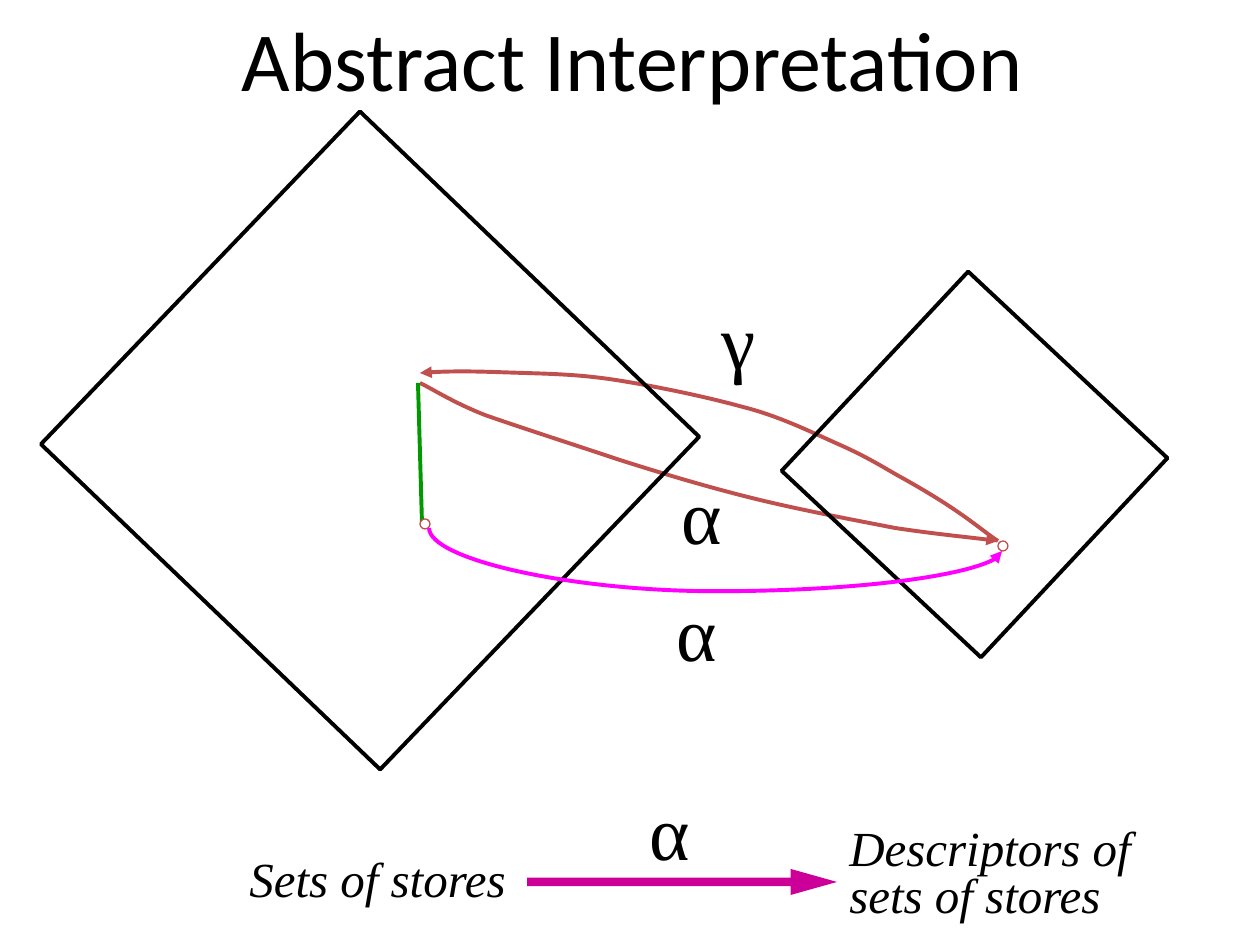
from lxml.etree import SubElement
from pptx import Presentation
from pptx.dml.color import RGBColor
from pptx.enum.shapes import MSO_CONNECTOR as CONN, MSO_SHAPE as SHAPE
from pptx.enum.text import MSO_ANCHOR as ANCHOR, PP_ALIGN as ALIGN
from pptx.oxml.ns import qn
from pptx.util import Pt

PX = 914400 / 126
SERIF = "Times New Roman"
RED, GREEN, PINK, PURPLE = "C0504D", "009900", "FF00FF", "CC0099"

TITLE = ("Abstract Interpretation", (97, 0, 1071, 116))
DIAMONDS = [((838, 328, 273, 273), 43.1), ((135, 210, 470, 461), 43.8)]
DOTS = [(420, 519), (998, 541)]
DOT_SIZE = 10
GREEK = [
    ("α", (665, 461, 74, 105)),
    ("γ", (709, 286, 57, 105)),
    ("α", (660, 578, 74, 105)),
    ("α", (633, 777, 74, 105)),
]
CAPTIONS = [
    ("Sets of stores", (237, 842, 284, 72), 1.0),
    ("Descriptors of\nsets of stores", (837, 823, 330, 107), 0.8),
]
ALPHA_CURVE = [
    (420, 383), (431, 388), (452, 402), (485, 415), (519, 427), (575, 445),
    (620, 460), (664, 474), (711, 488), (756, 499), (801, 510), (854, 520),
    (895, 528), (935, 534), (977, 538), (998, 541),
]
GAMMA_CURVE = [
    (998, 541), (990, 536), (973, 522), (955, 510), (939, 499), (917, 486),
    (897, 475), (878, 464), (863, 455), (838, 444), (811, 432), (779, 416),
    (743, 407), (707, 397), (659, 387), (622, 381), (586, 375), (558, 374),
    (525, 373), (491, 372), (456, 370), (420, 373),
]


def px(*values):
    return [round(v * PX) for v in values]


def color(value):
    return RGBColor.from_string(value)


def paint(s, fill=None, line=None, width=2.25):
    s.shadow.inherit = False
    if fill:
        s.fill.solid()
        s.fill.fore_color.rgb = color(fill)
    else:
        s.fill.background()
    if line:
        s.line.color.rgb = color(line)
        s.line.width = Pt(width)
    else:
        s.line.fill.background()


def arrowhead(s):
    SubElement(s.line._get_or_add_ln(), qn("a:tailEnd"), type="triangle")


def write(s, text, size, font=SERIF, italic=False, align=ALIGN.LEFT,
          anchor=ANCHOR.TOP, spacing=1.0, wrap=False):
    tf = s.text_frame
    tf.word_wrap = wrap
    tf.vertical_anchor = anchor
    for i, line in enumerate(text.split("\n")):
        p = tf.add_paragraph() if i else tf.paragraphs[0]
        p.alignment = align
        p.line_spacing = spacing
        r = p.add_run()
        r.text = line
        r.font.name = font
        r.font.size = Pt(size)
        r.font.italic = italic
        r.font.color.rgb = color("000000")


def curve(shapes, points):
    builder = shapes.build_freeform(*points[0], scale=PX)
    builder.add_line_segments(points[1:], close=False)
    s = builder.convert_to_shape()
    outline = next(s._element.iter(qn("a:path")))
    segments = outline.findall(qn("a:lnTo"))
    for i in range(0, len(segments), 3):
        bezier = SubElement(outline, qn("a:cubicBezTo"))
        for segment in segments[i:i + 3]:
            bezier.append(segment[0])
            outline.remove(segment)
    paint(s, line=RED)
    arrowhead(s)


def connect(shapes, kind, ends, line):
    s = shapes.add_connector(kind, *px(*ends))
    s.line.color.rgb = color(line)
    s.line.width = Pt(2.25)
    SubElement(s._element.spPr, qn("a:effectLst"))
    return s


def main():
    prs = Presentation()
    prs.slide_width, prs.slide_height = px(1260, 945)
    slide = prs.slides.add_slide(prs.slide_layouts[5])
    shapes = slide.shapes

    text, box = TITLE
    title = shapes.title
    title.left, title.top, title.width, title.height = px(*box)
    write(title, text, 48, font="Calibri", align=ALIGN.CENTER,
          anchor=ANCHOR.MIDDLE, wrap=True)

    for points in (ALPHA_CURVE, GAMMA_CURVE):
        curve(shapes, points)

    for box, angle in DIAMONDS:
        s = shapes.add_shape(SHAPE.RECTANGLE, *px(*box))
        s.rotation = angle
        paint(s, line="000000")

    connect(shapes, CONN.STRAIGHT, (418, 383, 422, 522), GREEN)
    for x, y in DOTS:
        s = shapes.add_shape(SHAPE.OVAL, *px(x, y, DOT_SIZE, DOT_SIZE))
        paint(s, fill="FFFFFF", line=RED, width=0.75)

    s = connect(shapes, CONN.CURVE, (704, 253, 727, 826), PINK)
    arrowhead(s)
    xfrm = s._element.spPr.find(qn("a:xfrm"))
    xfrm.set("rot", str(270 * 60000))
    xfrm.set("flipH", "1")
    geometry = s._element.spPr.find(qn("a:prstGeom"))
    SubElement(geometry.find(qn("a:avLst")), qn("a:gd"),
               name="adj1", fmla="val 274800")

    for text, box, spacing in CAPTIONS:
        s = shapes.add_textbox(*px(*box))
        paint(s, fill="FFFFFF")
        write(s, text, 28, italic=True, spacing=spacing)

    s = shapes.add_shape(SHAPE.RIGHT_ARROW, *px(527, 869, 310, 26))
    s.adjustments[0], s.adjustments[1] = 0.33, 1.78
    paint(s, fill=PURPLE)

    for text, box in GREEK:
        write(shapes.add_textbox(*px(*box)), text, 44,
              align=ALIGN.CENTER, anchor=ANCHOR.MIDDLE)

    prs.save("out.pptx")


if __name__ == "__main__":
    main()
